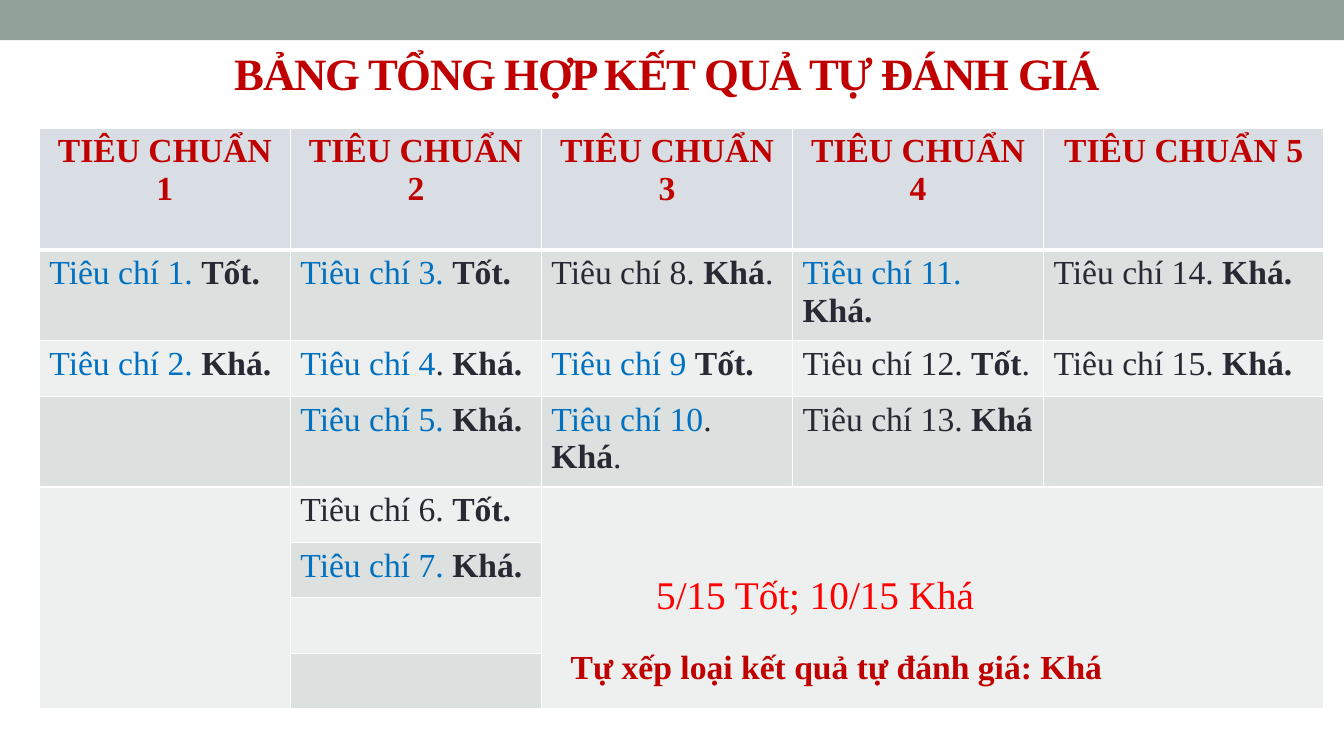
from pptx import Presentation
from pptx.dml.color import RGBColor
from pptx.enum import shapes, text
from pptx.oxml import parse_xml
from pptx.oxml.ns import nsdecls
from pptx.util import Inches, Pt

FONT = "Times New Roman"
RED, BLUE, DARK = "C00000", "0070C0", "292934"
LEFT, CENTER, RIGHT = text.PP_ALIGN.LEFT, text.PP_ALIGN.CENTER, text.PP_ALIGN.RIGHT

TITLE = "BẢNG TỔNG HỢP KẾT QUẢ TỰ ĐÁNH GIÁ"
TOTAL = "5/15 Tốt; 10/15 Khá"
RATING = "Tự xếp loại kết quả tự đánh giá: Khá"
HEADERS = [f"TIÊU CHUẨN {n}" for n in range(1, 6)]
# Each criterion: blue text, dark text, bold result, dark ending
CRITERIA = [
    [("Tiêu chí 1. ", "", "Tốt.", ""), ("Tiêu chí 2. ", "", "Khá.", "")],
    [("Tiêu chí 3. ", "", "Tốt.", ""), ("Tiêu chí 4", ". ", "Khá.", ""),
     ("Tiêu chí 5. ", "", "Khá.", ""), ("", "Tiêu chí 6. ", "Tốt.", ""),
     ("Tiêu chí 7. ", "", "Khá.", "")],
    [("", "Tiêu chí 8. ", "Khá", "."), ("Tiêu chí 9 ", "", "Tốt.", ""),
     ("Tiêu chí 10", ". ", "Khá", ".")],
    [("Tiêu chí 11. ", "", "Khá.", ""), ("", "Tiêu chí 12. ", "Tốt", "."),
     ("", "Tiêu chí 13. ", "Khá", "")],
    [("", "Tiêu chí 14. ", "Khá.", ""), ("", "Tiêu chí 15. ", "Khá.", "")],
]
COL_WIDTHS = [2.49] * 4 + [2.78]
ROW_HEIGHTS = [1.21, 0.83, 0.55, 0.83] + [0.55] * 4
MERGES = [((4, 0), (7, 0)), ((4, 2), (7, 4))]
HEADER_FILL, BANDS = "D9DEE4", ("EEF0EF", "DCE0DE")


def rgb(code):
    return RGBColor.from_string(code)


def add_run(p, words, color, size=24, bold=False):
    r = p.add_run()
    r.text = words
    for name, value in dict(name=FONT, size=Pt(size), bold=bold).items():
        setattr(r.font, name, value)
    r.font.color.rgb = rgb(color)
    return r


def add_label(s, box, words, color, size, bold, align, anchor=text.MSO_ANCHOR.TOP):
    tf = s.shapes.add_textbox(*map(Inches, box)).text_frame
    tf.word_wrap = True
    tf.vertical_anchor = anchor
    p = tf.paragraphs[0]
    p.alignment = align
    return add_run(p, words, color, size, bold)


def set_borders(cell, row):
    """White cell borders, thicker between header and body."""
    widths = dict(L=1, R=1, T=3 if row == 1 else 1, B=3 if row == 0 else 1)
    for side, width in widths.items():
        cell._tc.get_or_add_tcPr().append(parse_xml(
            f'<a:ln{side} {nsdecls("a")} w="{Pt(width)}"><a:solidFill>'
            f'<a:srgbClr val="FFFFFF"/></a:solidFill></a:ln{side}>'))


def fill_cell(cell, row, col):
    p = cell.text_frame.paragraphs[0]
    if row == 0:
        p.alignment = CENTER
        add_run(p, HEADERS[col], RED, bold=True)
    elif row <= len(CRITERIA[col]):
        for i, words in enumerate(CRITERIA[col][row - 1]):
            if words:
                add_run(p, words, DARK if i else BLUE, bold=i == 2)
    set_borders(cell, row)
    cell.fill.solid()
    cell.fill.fore_color.rgb = rgb(BANDS[row % 2] if row else HEADER_FILL)


def add_results_table(s):
    rows, cols = len(ROW_HEIGHTS), len(COL_WIDTHS)
    box = map(Inches, (0.39, 1.27, sum(COL_WIDTHS), sum(ROW_HEIGHTS)))
    table = s.shapes.add_table(rows, cols, *box).table
    for col, width in zip(table.columns, COL_WIDTHS):
        col.width = Inches(width)
    for row, height in zip(table.rows, ROW_HEIGHTS):
        row.height = Inches(height)
    for row in range(rows):
        for col in range(cols):
            fill_cell(table.cell(row, col), row, col)
    for first, last in MERGES:
        table.cell(*first).merge(table.cell(*last))


def main():
    prs = Presentation()
    prs.slide_width, prs.slide_height = Inches(13.33), Inches(7.5)
    s = prs.slides.add_slide(prs.slide_layouts[6])

    band = s.shapes.add_shape(shapes.MSO_SHAPE.RECTANGLE, 0, 0, prs.slide_width, Inches(0.4))
    band.shadow.inherit = False
    band.fill.solid()
    band.fill.fore_color.rgb = rgb("93A299")
    band.line.fill.background()

    r = add_label(s, (0.87, 0, 11.5, 1.45), TITLE, RED, 32, True, CENTER, text.MSO_ANCHOR.MIDDLE)
    r.font._element.set("spc", "-100")
    add_results_table(s)
    add_label(s, (1.61, 6.36, 9.42, 0.5), RATING, RED, 24, True, RIGHT)
    add_label(s, (6.41, 5.61, 4.61, 0.57), TOTAL, "FF0000", 28, False, LEFT)
    prs.save("out.pptx")


if __name__ == "__main__":
    main()
